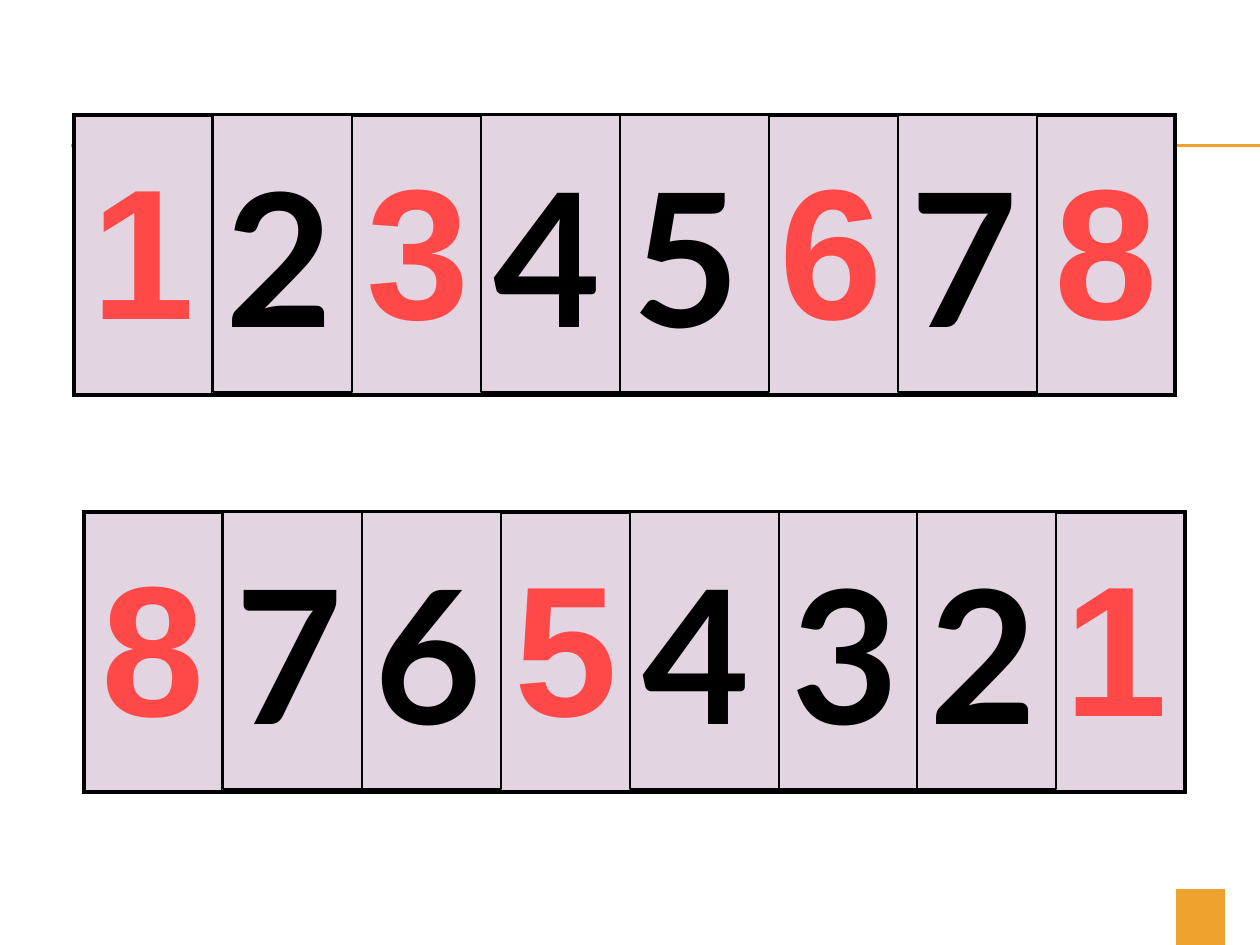
from dataclasses import dataclass

from lxml.etree import SubElement
from pptx import Presentation
from pptx.dml.color import RGBColor
from pptx.enum.shapes import MSO_CONNECTOR, MSO_SHAPE
from pptx.enum.text import MSO_ANCHOR, PP_ALIGN
from pptx.oxml.ns import qn
from pptx.util import Pt

SCALE = 914400 / 126  # EMU per px


@dataclass(frozen=True)
class Theme:
    accent: RGBColor = RGBColor(0xF0, 0xA2, 0x2E)
    card: RGBColor = RGBColor(0xE2, 0xD4, 0xE1)
    ink: RGBColor = RGBColor(0, 0, 0)
    answer: RGBColor = RGBColor(0xFF, 0x49, 0x49)
    answer_font: str = "Arial"
    cover_font: str = "Lato"
    digit_size: int = 106
    thin: float = 0.75
    inner: float = 1
    outer: float = 2.25


theme = Theme()


def px(*lengths):
    return [round(length * SCALE) for length in lengths]


def write_digit(text_frame, digit, font_name, color):
    text_frame.text = digit
    font = text_frame.paragraphs[0].runs[0].font
    font.name, font.size, font.bold = font_name, Pt(theme.digit_size), True
    font.color.rgb = color


deck = Presentation()
deck.slide_width, deck.slide_height = px(1260, 945)
page = deck.slides.add_slide(deck.slide_layouts[6])

for y in (145, 146):
    rule = page.shapes.add_connector(MSO_CONNECTOR.STRAIGHT, *px(71, y, 1260, y))
    rule.line.color.rgb = theme.accent
    rule.line.width = Pt(theme.thin)
    SubElement(rule._element.spPr, qn("a:effectLst"))

# Each strip: left, top, digits left open by column, covers as (digit, left, width)
strips = [
    (74, 115, {0: "1", 2: "3", 5: "6", 7: "8"},
     [("2", 213, 139), ("4", 481, 139), ("5", 620, 149), ("7", 898, 139)]),
    (84, 512, {0: "8", 3: "5", 7: "1"},
     [("7", 223, 139), ("6", 362, 139), ("4", 630, 149), ("3", 779, 139), ("2", 917, 139)]),
]
column_count = 8

for left, top, answers, covers in strips:
    table = page.shapes.add_table(1, column_count, *px(left, top, 1101, 280)).table
    for column, cell in enumerate(table.rows[0].cells):
        cell.vertical_anchor = MSO_ANCHOR.MIDDLE
        border_widths = {
            "a:lnL": theme.outer if column == 0 else theme.inner,
            "a:lnR": theme.outer if column == column_count - 1 else theme.inner,
            "a:lnT": theme.outer,
            "a:lnB": theme.outer,
        }
        properties = cell._tc.get_or_add_tcPr()
        for side, width in border_widths.items():
            border = SubElement(properties, qn(side), w=str(Pt(width)))
            SubElement(SubElement(border, qn("a:solidFill")), qn("a:srgbClr"), val=str(theme.ink))
        cell.fill.solid()
        cell.fill.fore_color.rgb = theme.card
        if column in answers:
            write_digit(cell.text_frame, answers[column], theme.answer_font, theme.answer)
            paragraph = cell.text_frame.paragraphs[0]
            paragraph.alignment = PP_ALIGN.CENTER
            spacing = SubElement(paragraph._p.get_or_add_pPr(), qn("a:spcBef"))
            SubElement(spacing, qn("a:spcPct"), val="20000")

for _, top, _, covers in strips:
    for digit, left, width in covers:
        cover = page.shapes.add_shape(MSO_SHAPE.RECTANGLE, *px(left, top, width, 277))
        cover.shadow.inherit = False
        cover.fill.solid()
        cover.fill.fore_color.rgb = theme.card
        cover.line.color.rgb = theme.ink
        cover.line.width = Pt(theme.thin)
        cover.text_frame.word_wrap = False
        cover.text_frame.vertical_anchor = MSO_ANCHOR.MIDDLE
        write_digit(cover.text_frame, digit, theme.cover_font, theme.ink)
        cover.text_frame.paragraphs[0].alignment = PP_ALIGN.LEFT

button = page.shapes.add_shape(MSO_SHAPE.ACTION_BUTTON_CUSTOM, *px(1176, 889, 49, 56))
button.shadow.inherit = False
button.fill.solid()
button.fill.fore_color.rgb = theme.accent
button.line.fill.background()

deck.save("out.pptx")
